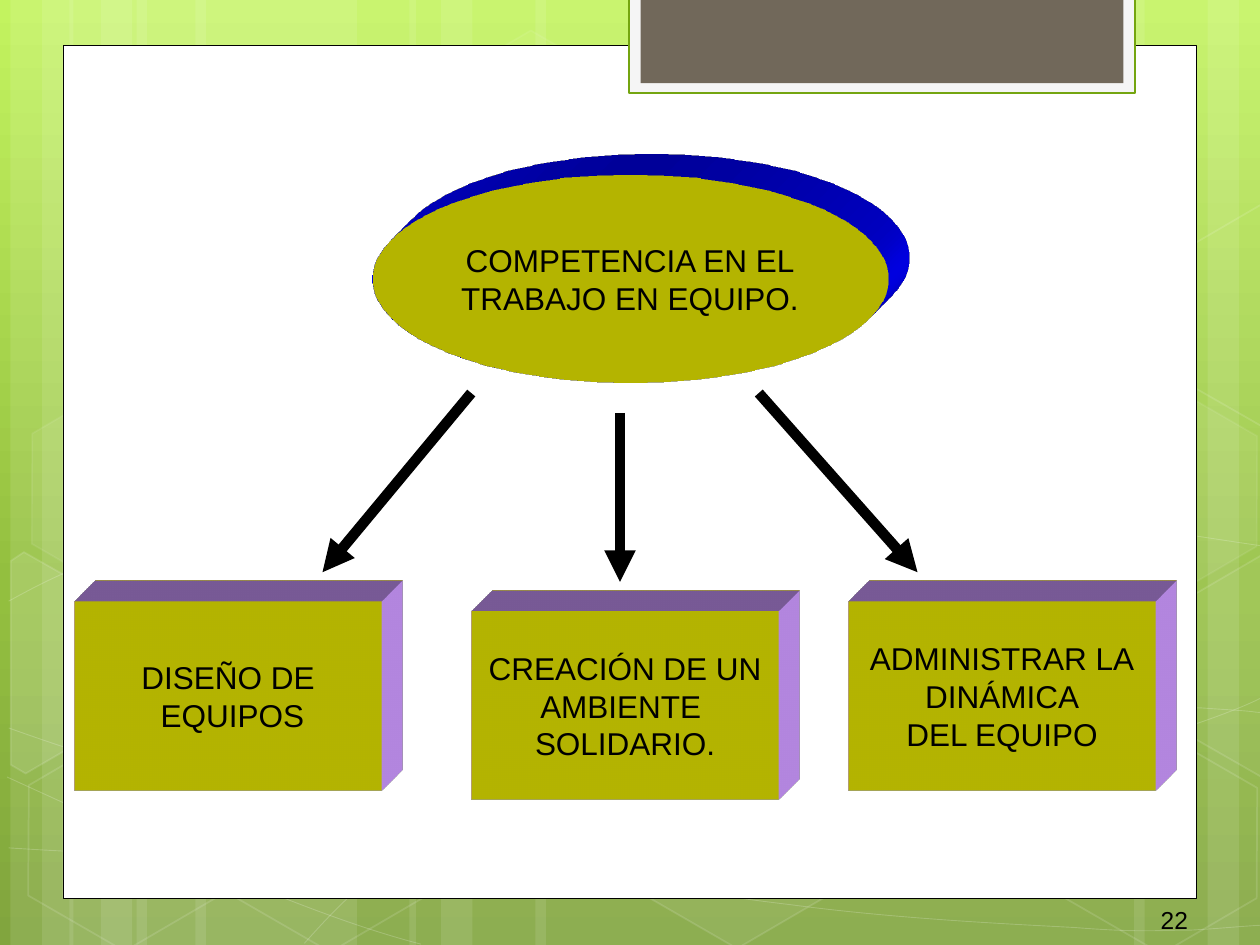
from copy import deepcopy
from dataclasses import dataclass
from math import cos, radians, sin

from lxml.etree import SubElement, fromstring
from pptx import Presentation
from pptx.dml.color import RGBColor
from pptx.enum.shapes import MSO_CONNECTOR, MSO_SHAPE
from pptx.enum.text import MSO_ANCHOR, PP_ALIGN
from pptx.oxml.ns import nsdecls, qn
from pptx.util import Pt


@dataclass(frozen=True)
class Theme:
    font: str = "Arial"
    body_size: int = 18
    number_size: int = 14
    backdrop: tuple = ((0, "C3F35F"), (0.62, "93BF3F"), (1, "81A53E"))
    white: str = "FFFFFF"
    black: str = "000000"
    tab: str = "F5F5F5"
    tab_line: str = "74A510"
    tab_center: str = "71685A"
    face: str = "FFFF00"
    oval_depth: str = "0000FF"
    box_depth: str = "CC99FF"


theme = Theme()


def paint(shape, fill=None, line=None, width=1, fill_alpha=100, line_alpha=100):
    shape.shadow.inherit = False
    for part, color in ((shape.fill, fill), (shape.line.fill, line)):
        if color:
            part.solid()
            part.fore_color.rgb = RGBColor.from_string(color)
        else:
            part.background()
    if line:
        shape.line.width = Pt(width)
    for place, alpha in (("a:solidFill", fill_alpha), ("a:ln/a:solidFill", line_alpha)):
        color = shape.element.spPr.find(
            "/".join(qn(tag) for tag in (place + "/a:srgbClr").split("/")))
        if color is not None and alpha < 100:
            SubElement(color, qn("a:alpha")).set("val", str(alpha * 1000))


def write(shape, lines, size, alignment):
    frame = shape.text_frame
    frame.vertical_anchor = MSO_ANCHOR.MIDDLE
    for index, line in enumerate(lines):
        para = frame.add_paragraph() if index else frame.paragraphs[0]
        para.text = line
        para.alignment = alignment
        para.font.name = theme.font
        para.font.size = Pt(size)
        para.font.color.rgb = RGBColor.from_string(theme.black)


deck = Presentation()
deck.slide_width, deck.slide_height = Pt(720), Pt(540)
page = deck.slides.add_slide(deck.slide_layouts[6])

backdrop = page.background.fill
backdrop.gradient()
backdrop.gradient_angle = 270
stop_list = page.element.find(".//" + qn("a:gsLst"))
stop_list.append(deepcopy(stop_list[0]))
for stop, (position, color) in zip(backdrop.gradient_stops, theme.backdrop):
    stop.position = position
    stop.color.rgb = RGBColor.from_string(color)

decoration = page.shapes.add_group_shape().shapes

stripes = []
for left, middle_width in ((6, 126), (39.6, 126)):
    stripes += [(left + 72, middle_width), (left, 36), (left + 18, 60)]
stripes += [(528, 126), (690, 36), (648, 60), (306, 222), (234, 36), (252, 60)]
for left, width in stripes:
    stripe = decoration.add_shape(MSO_SHAPE.RECTANGLE, Pt(left), 0, Pt(width), Pt(540))
    paint(stripe, theme.white, fill_alpha=10)
    if left in (528, 690, 648):
        stripe.rotation = 180

curves = [
    [(5, 484.5), (44, 487), (83, 489), (137, 488), (191, 487), (258, 486), (330, 479),
     (402, 472), (504, 458), (570, 444), (636, 430.5), (703.5, 409), (725, 396.5)],
    [(5, 343.5), (26, 332), (47, 321), (87, 310), (128, 299.5), (186.5, 283.5), (250, 278.5),
     (314, 273.5), (391.5, 273), (471, 278.5), (550, 284.5), (682, 306.5), (725, 312.5)],
    [(4, 444), (91.5, 484), (178, 523.5), (240.5, 539.5)],
    [(5, 416), (27.5, 424), (50.5, 432), (92, 443.5), (134, 454), (196.5, 472.5), (257, 484.5),
     (317, 497), (392.5, 510), (452, 517), (512, 525), (576, 528), (614, 530),
     (651.5, 533), (661.5, 531.5), (680.5, 531.5), (699, 530.5), (712, 529), (725, 528.5)],
    [(174, 539), (187, 524.5), (200, 510.5), (217.5, 497.5), (235, 484.5), (259, 470),
     (279.5, 460), (300, 450), (312, 445.5), (338.5, 438.5), (364.5, 431.5), (412.5, 421),
     (438, 416), (463.5, 411), (467.5, 411), (489.5, 409.5), (512, 407.5), (547, 405.5),
     (571.5, 404.5), (596.5, 404), (638, 404.5), (638, 404.5), (654, 404.5), (670, 404.5),
     (686, 404.5), (699, 405.5), (711.5, 406), (718, 407), (724.5, 407.5), (722, 407), (724.5, 407.5)],
]
for knots in curves:
    first, *others = [(Pt(x), Pt(y)) for x, y in knots]
    builder = decoration.build_freeform(*first)
    builder.add_line_segments(others, close=False)
    curve = builder.convert_to_shape()
    paint(curve, line=theme.white, width=0.5, line_alpha=20)
    outline = curve.element.find(".//" + qn("a:path"))
    segments = outline.findall(qn("a:lnTo"))
    for start in range(0, len(segments), 3):
        bezier = SubElement(outline, qn("a:cubicBezTo"))
        for segment in segments[start:start + 3]:
            bezier.append(segment[0])
            outline.remove(segment)

hexagons = [
    (240.5, 26, 4, 8), (358, 424, 6, 12), (8, 425.5, 0, 12), (10, 224.5, 7, 8),
    (125.5, 426, 0, 12), (542, 326, 10, 12), (600.5, 427, 0, 12), (600.5, 226, 7, 8),
]
for left, top, fill_alpha, line_alpha in hexagons:
    hexagon = decoration.add_shape(MSO_SHAPE.HEXAGON, Pt(left), Pt(top), Pt(126), Pt(109.5))
    hexagon.adjustments[0] = 0.285
    hexagon.rotation = 30
    paint(hexagon, theme.white if fill_alpha else None, theme.white, 1, fill_alpha, line_alpha)

left_cut = [(6, 320.5), (13.5, 315.5), (69, 347), (68.5, 410.5), (14.5, 442), (6, 437)]
right_cut = [(666.5, 349), (720.5, 317.5), (726.5, 321), (726.5, 441.5), (721.5, 444), (666.5, 412.5)]
upper_cut = [(x, y - 200.5) for x, y in right_cut]
cosine, sine = cos(radians(30)), sin(radians(30))
cuts = [(left_cut, 26, 385, 10), (right_cut, 709, 374.5, 4), (upper_cut, 709, 174, 0)]
for corners, center_x, center_y, fill_alpha in cuts:
    first, *others = [
        (Pt(center_x + (x - center_x) * cosine + (y - center_y) * sine),
         Pt(center_y - (x - center_x) * sine + (y - center_y) * cosine))
        for x, y in corners]
    builder = decoration.build_freeform(*first)
    builder.add_line_segments(others, close=True)
    cut = builder.convert_to_shape()
    cut.rotation = 30
    paint(cut, theme.white if fill_alpha else None, theme.white, 1, fill_alpha, 12)

panels = [
    (36, 26, 648, 487.3, theme.white, theme.black, 0.5),
    (359.2, -1.5, 289.5, 54.5, theme.tab, theme.tab_line, 1.25),
    (366, -1.5, 276, 49, theme.tab_center, None, 0),
]
for left, top, width, height, fill, line, line_width in panels:
    panel = page.shapes.add_shape(MSO_SHAPE.RECTANGLE, Pt(left), Pt(top), Pt(width), Pt(height))
    paint(panel, fill, line, line_width)

diagram = page.shapes.add_group_shape().shapes
blocks = [
    (MSO_SHAPE.OVAL, 212.7, 100, 294.8, 118.6, theme.oval_depth,
     ["COMPETENCIA EN EL", "TRABAJO EN EQUIPO."]),
    (MSO_SHAPE.RECTANGLE, 269.4, 349.2, 175.7, 108, theme.box_depth,
     ["CREACIÓN DE UN", "AMBIENTE ", "SOLIDARIO."]),
    (MSO_SHAPE.RECTANGLE, 484.8, 343.6, 175.7, 108, theme.box_depth,
     ["ADMINISTRAR LA", "DINÁMICA", "DEL EQUIPO"]),
    (MSO_SHAPE.RECTANGLE, 42.5, 343.6, 175.7, 108, theme.box_depth,
     ["DISEÑO DE", " EQUIPOS"]),
]
for kind, left, top, width, height, depth_color, lines in blocks:
    block = diagram.add_shape(kind, Pt(left), Pt(top), Pt(width), Pt(height))
    paint(block, theme.face)
    write(block, lines, theme.body_size, PP_ALIGN.CENTER)
    block.text_frame.word_wrap = False
    block.element.spPr.append(fromstring(
        f'<a:scene3d {nsdecls("a")}><a:camera prst="legacyObliqueTopRight"/>'
        '<a:lightRig rig="legacyFlat3" dir="b"/></a:scene3d>'))
    block.element.spPr.append(fromstring(
        f'<a:sp3d {nsdecls("a")} extrusionH="{Pt(33.87)}" prstMaterial="legacyMatte">'
        '<a:bevelT w="13500" h="13500" prst="angle"/><a:bevelB w="13500" h="13500" prst="angle"/>'
        f'<a:extrusionClr><a:srgbClr val="{depth_color}"/></a:extrusionClr></a:sp3d>'))

arrows = [(354.3, 236, 354.3, 332.5), (269.3, 224.6, 184.3, 327), (433.6, 224.6, 524.3, 327)]
for ends in arrows:
    arrow = diagram.add_connector(MSO_CONNECTOR.STRAIGHT, *(Pt(end) for end in ends))
    arrow.line.color.rgb = RGBColor.from_string(theme.black)
    arrow.line.width = Pt(6)
    SubElement(arrow.element.spPr.find(qn("a:ln")), qn("a:tailEnd")).set("type", "triangle")
    SubElement(arrow.element.spPr, qn("a:effectLst"))

number = page.shapes.add_textbox(Pt(581), Pt(511), Pt(105), Pt(29))
number.text_frame.word_wrap = True
write(number, ["22"], theme.number_size, PP_ALIGN.RIGHT)

deck.save("out.pptx")
